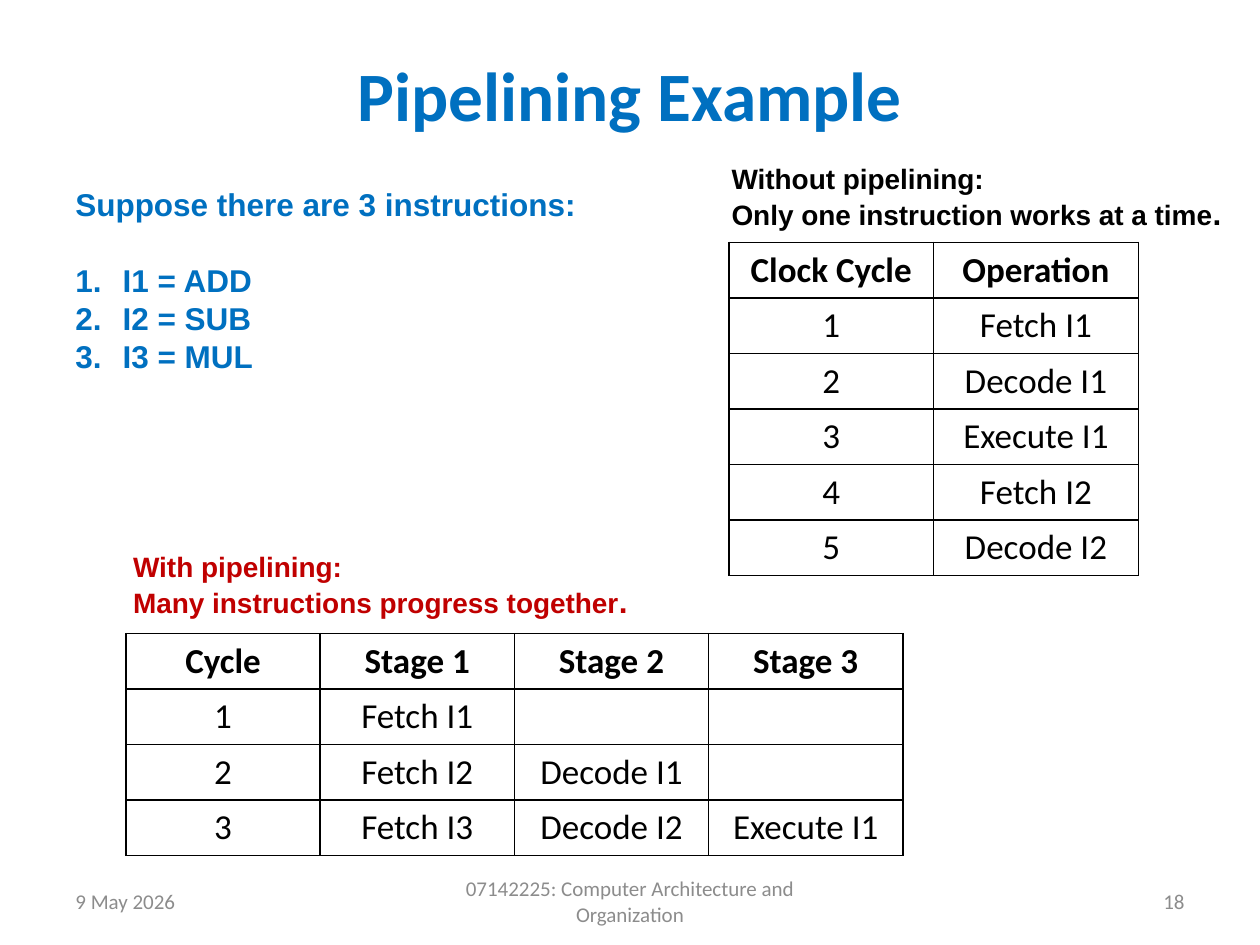
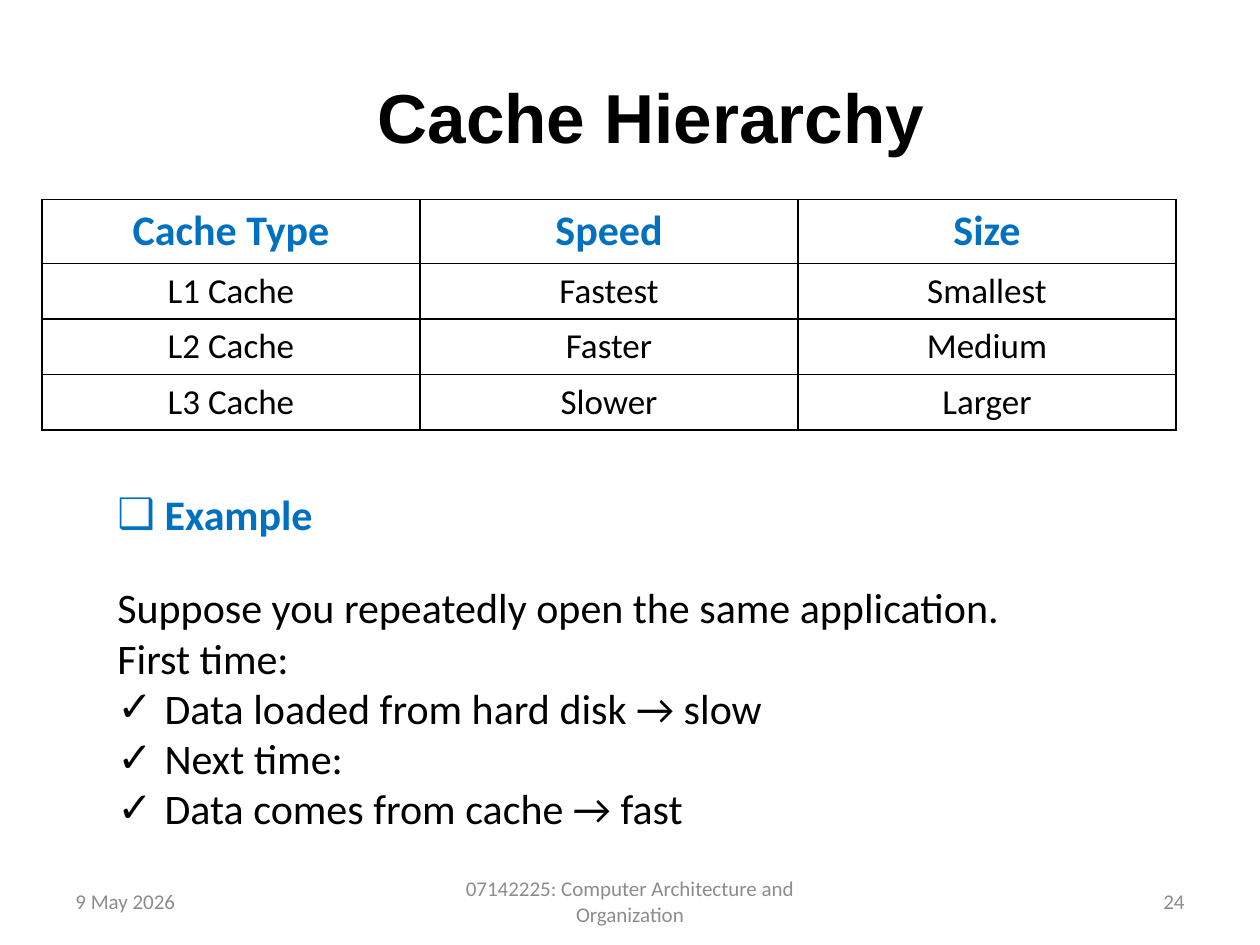
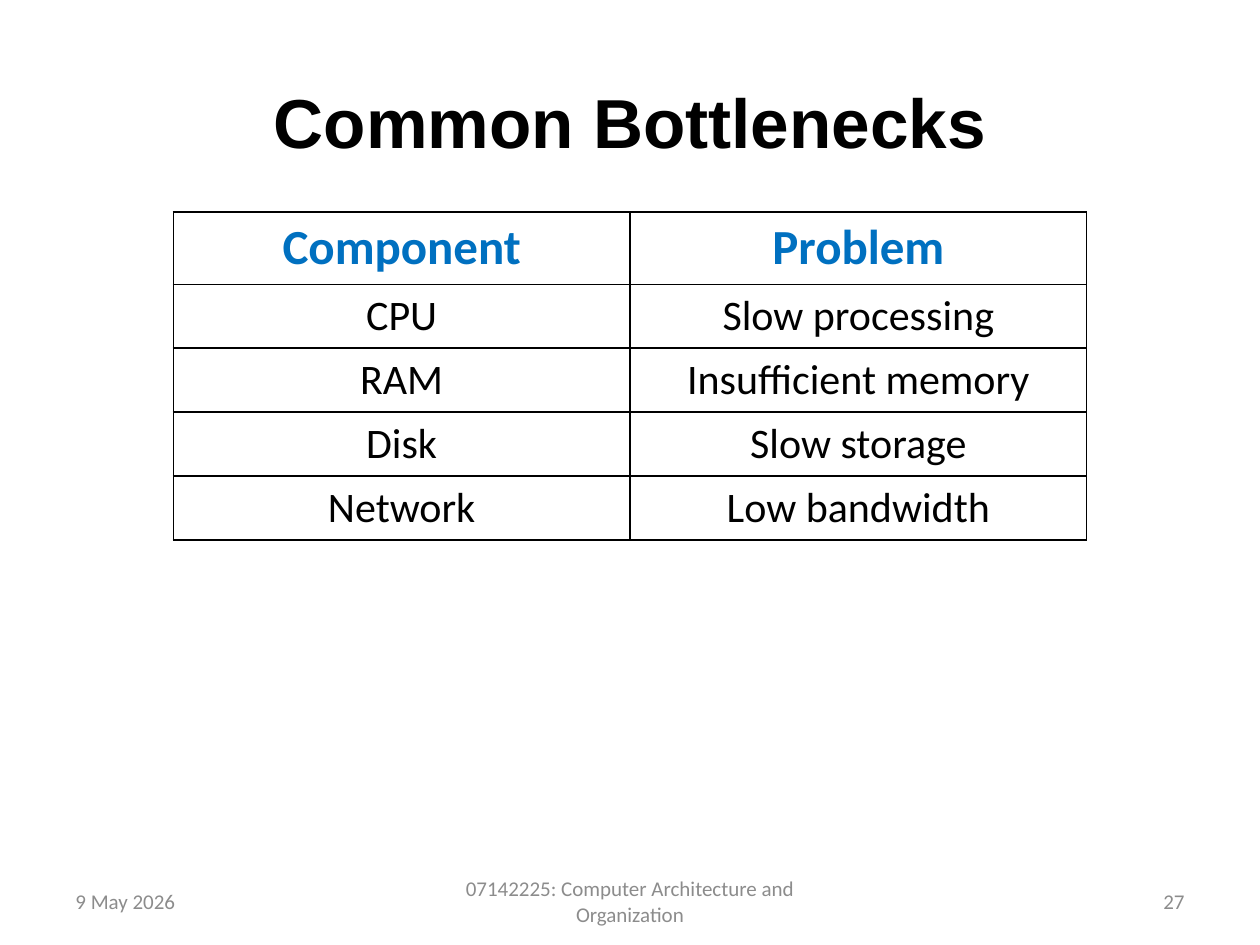
from lxml import etree
from pptx import Presentation
from pptx.dml.color import RGBColor
from pptx.enum import text
from pptx.oxml import ns
from pptx.util import Pt

BLACK = RGBColor(0x00, 0x00, 0x00)
BLUE = RGBColor(0x00, 0x70, 0xC0)
RED = RGBColor(0xC0, 0x00, 0x00)
GREY = RGBColor(0x8C, 0x8C, 0x8C)
HEADING, BODY = "Arial", "Calibri"
LEFT, CENTER, RIGHT = text.PP_ALIGN.LEFT, text.PP_ALIGN.CENTER, text.PP_ALIGN.RIGHT
TOP, MIDDLE, BOTTOM = text.MSO_ANCHOR.TOP, text.MSO_ANCHOR.MIDDLE, text.MSO_ANCHOR.BOTTOM
HANGING = 27
NUMBERED = "1."

DATE = "9 May 2026"
COURSE = "07142225: Computer Architecture and Organization"

# Tables: position, column width, header size and colour, body size, rows.
# Texts: box, anchor, line pitch, lines; a line is
# (bullet, space before, [(words, size, font, colour, bold), ...]).
SLIDES = [
    {
        "title": ("Pipelining Example", (36, 24.5, 648, 58), BODY, BLUE),
        "number": 18,
        "tables": [
            ((416.5, 138.5), 117, 20, BLACK, 20, [
                ("Clock Cycle", "Operation"),
                ("1", "Fetch I1"),
                ("2", "Decode I1"),
                ("3", "Execute I1"),
                ("4", "Fetch I2"),
                ("5", "Decode I2"),
            ]),
            ((72, 362), 111, 20, BLACK, 20, [
                ("Cycle", "Stage 1", "Stage 2", "Stage 3"),
                ("1", "Fetch I1", "", ""),
                ("2", "Fetch I2", "Decode I1", ""),
                ("3", "Fetch I3", "Decode I2", "Execute I1"),
            ]),
        ],
        "texts": [
            ((36, 101.5, 308, 117), MIDDLE, 21.6, [
                (None, 0, [("Suppose there are 3 instructions:", 18, HEADING, BLUE, True)]),
                (NUMBERED, 21.6, [("I1 = ADD", 18, HEADING, BLUE, True)]),
                (NUMBERED, 0, [("I2 = SUB", 18, HEADING, BLUE, True)]),
                (NUMBERED, 0, [("I3 = MUL", 18, HEADING, BLUE, True)]),
            ]),
            ((69, 284.5, 328, 73), BOTTOM, 21, [
                (None, 0, [("With pipelining:", 16, HEADING, RED, True)]),
                (None, 0, [("Many instructions progress together", 16, HEADING, RED, True),
                           (".", 18, HEADING, RED, True)]),
            ]),
            ((411, 65, 308, 71), BOTTOM, 21, [
                (None, 0, [("Without pipelining:", 16, HEADING, BLACK, True)]),
                (None, 0, [("Only one instruction works at a time", 16, HEADING, BLACK, True),
                           (".", 18, HEADING, BLACK, True)]),
            ]),
        ],
    },
    {
        "title": ("Cache Hierarchy", (48, 30, 648, 72), HEADING, BLACK),
        "number": 24,
        "tables": [
            ((24, 114), 216, 24, BLUE, 20, [
                ("Cache Type", "Speed", "Size"),
                ("L1 Cache", "Fastest", "Smallest"),
                ("L2 Cache", "Faster", "Medium"),
                ("L3 Cache", "Slower", "Larger"),
            ]),
        ],
        "texts": [
            ((60, 276, 576, 211), TOP, 28.7, [
                ("❑", 0, [("Example", 24, BODY, BLUE, True)]),
                (None, 24.4, [("Suppose you repeatedly open the same application.",
                               24, BODY, BLACK, False)]),
                (None, 0, [("First time:", 24, BODY, BLACK, False)]),
                ("✓", 0, [("Data loaded from hard disk → slow", 24, BODY, BLACK, False)]),
                ("✓", 0, [("Next time:", 24, BODY, BLACK, False)]),
                ("✓", 0, [("Data comes from cache → fast", 24, BODY, BLACK, False)]),
            ]),
        ],
    },
    {
        "title": ("Common Bottlenecks", (36, 24, 648, 90), HEADING, BLACK),
        "number": 27,
        "tables": [
            ((99, 121), 261, 28, BLUE, 24, [
                ("Component", "Problem"),
                ("CPU", "Slow processing"),
                ("RAM", "Insufficient memory"),
                ("Disk", "Slow storage"),
                ("Network", "Low bandwidth"),
            ]),
        ],
        "texts": [],
    },
]


def style(font, size, name, color, bold=False):
    font.size, font.name, font.bold = Pt(size), name, bold
    font.color.rgb = color


def add_bullet(para, bullet):
    """Give the paragraph a hanging indent with a number or a symbol."""
    props = para._p.get_or_add_pPr()
    props.set("marL", str(Pt(HANGING)))
    props.set("indent", str(-Pt(HANGING)))
    if bullet == NUMBERED:
        etree.SubElement(props, ns.qn("a:buAutoNum"), type="arabicPeriod")
    else:
        etree.SubElement(props, ns.qn("a:buFont"), typeface=HEADING)
        etree.SubElement(props, ns.qn("a:buChar"), char=bullet)


def add_box(page, place, anchor):
    box = page.shapes.add_textbox(*map(Pt, place))
    box.text_frame.word_wrap = True
    box.text_frame.vertical_anchor = anchor
    return box.text_frame


def add_text(page, place, anchor, pitch, lines):
    frame = add_box(page, place, anchor)
    for index, (bullet, before, spans) in enumerate(lines):
        para = frame.add_paragraph() if index else frame.paragraphs[0]
        para.line_spacing = Pt(pitch)
        if before:
            para.space_before = Pt(before)
        if bullet:
            add_bullet(para, bullet)
        for words, *look in spans:
            span = para.add_run()
            span.text = words
            style(span.font, *look)


def add_borders(cell):
    props = cell._tc.get_or_add_tcPr()
    for position, side in enumerate(("lnL", "lnR", "lnT", "lnB")):
        line = etree.Element(ns.qn(f"a:{side}"), w=str(Pt(1)))
        fill = etree.SubElement(line, ns.qn("a:solidFill"))
        etree.SubElement(fill, ns.qn("a:srgbClr"), val=str(BLACK))
        props.insert(position, line)


def add_grid(page, place, column_width, head_size, head_color, body_size, rows):
    count = len(rows[0])
    heights = [round(1.22 * size + 7.2, 1)
               for size in [head_size] + [body_size] * (len(rows) - 1)]
    table = page.shapes.add_table(
        len(rows), count, Pt(place[0]), Pt(place[1]),
        Pt(column_width * count), Pt(sum(heights))).table
    table.first_row = table.horz_banding = False
    for column in table.columns:
        column.width = Pt(column_width)
    for r, row in enumerate(rows):
        table.rows[r].height = Pt(heights[r])
        look = (body_size, BODY, BLACK) if r else (head_size, BODY, head_color, True)
        for c, words in enumerate(row):
            cell = table.cell(r, c)
            cell.fill.background()
            add_borders(cell)
            cell.vertical_anchor = MIDDLE
            para = cell.text_frame.paragraphs[0]
            para.alignment = CENTER
            if words:
                para.text = words
                style(para.runs[0].font, *look)


def set_title(page, words, place, font_name, color):
    title = page.shapes.title
    title.left, title.top, title.width, title.height = map(Pt, place)
    frame = title.text_frame
    frame.text = words
    frame.auto_size = text.MSO_AUTO_SIZE.NONE
    frame.vertical_anchor = MIDDLE
    frame.paragraphs[0].alignment = CENTER
    style(frame.paragraphs[0].runs[0].font, 39.6, font_name, color, True)


def add_footer(page, number):
    parts = [(DATE, 36, 168, LEFT), (COURSE, 246, 228, CENTER), (str(number), 516, 168, RIGHT)]
    for words, left, width, alignment in parts:
        para = add_box(page, (left, 500.5, width, 28.8), MIDDLE).paragraphs[0]
        para.text = words
        para.alignment = alignment
        style(para.runs[0].font, 12, BODY, GREY)


def main():
    deck = Presentation()
    deck.slide_width, deck.slide_height = Pt(720), Pt(540)
    for content in SLIDES:
        page = deck.slides.add_slide(deck.slide_layouts[5])
        set_title(page, *content["title"])
        for table in content["tables"]:
            add_grid(page, *table)
        for block in content["texts"]:
            add_text(page, *block)
        add_footer(page, content["number"])
    deck.save("out.pptx")


if __name__ == "__main__":
    main()
